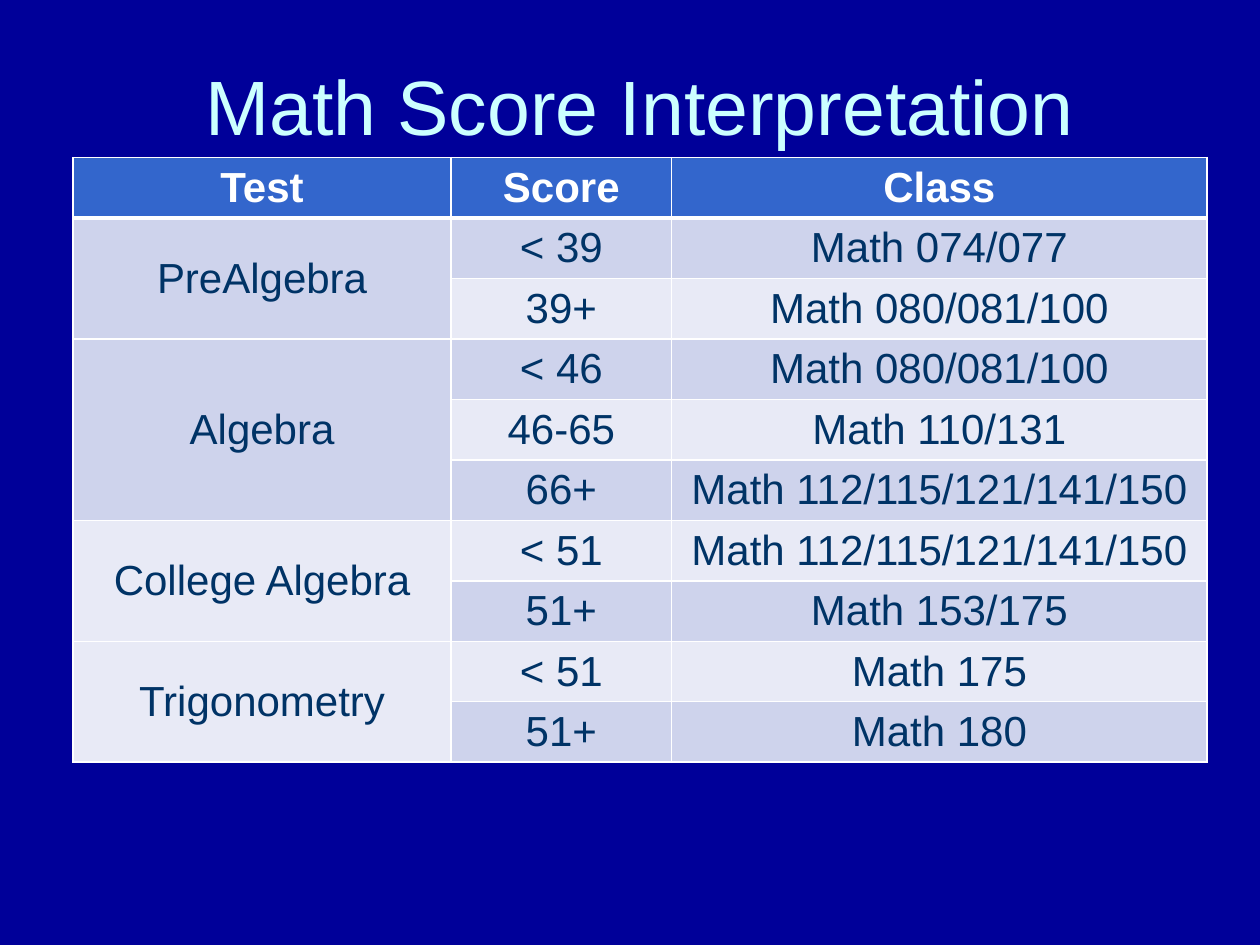
"""Build the Math Score Interpretation slide."""
from lxml import etree
from pptx import Presentation
from pptx.dml.color import RGBColor
from pptx.enum.text import MSO_ANCHOR, PP_ALIGN
from pptx.oxml.ns import qn
from pptx.util import Inches, Pt

CENTER = PP_ALIGN.CENTER
MIDDLE = MSO_ANCHOR.MIDDLE
NAVY = RGBColor(0x00, 0x00, 0x99)
PALE_CYAN = RGBColor(0xCC, 0xFF, 0xFF)
WHITE = RGBColor(0xFF, 0xFF, 0xFF)
BLUE = RGBColor(0x33, 0x66, 0xCC)
DARK_BLUE = RGBColor(0x00, 0x33, 0x66)
BANDS = (RGBColor(0xCE, 0xD3, 0xEC), RGBColor(0xE8, 0xEA, 0xF6))
FONT = "Arial"

TITLE = "Math Score Interpretation"
HEADERS = ("Test", "Score", "Class")
TESTS = [
    ("PreAlgebra", [("< 39", "Math 074/077"), ("39+", "Math 080/081/100")]),
    ("Algebra", [
        ("< 46", "Math 080/081/100"),
        ("46-65", "Math 110/131"),
        ("66+", "Math 112/115/121/141/150"),
    ]),
    ("College Algebra", [("< 51", "Math 112/115/121/141/150"), ("51+", "Math 153/175")]),
    ("Trigonometry", [("< 51", "Math 175"), ("51+", "Math 180")]),
]
COL_WIDTHS = (3, 1.75, 4.25)
ROW_HEIGHT = 0.47
CELL_MARGIN = 0.04


def add_text(tf, text, size, color, bold=False):
    tf.word_wrap = True
    p = tf.paragraphs[0]
    p.alignment = CENTER
    r = p.add_run()
    r.text = text
    r.font.name = FONT
    r.font.size = Pt(size)
    r.font.bold = bold
    r.font.color.rgb = color


def set_borders(cell, widths):
    tc_pr = cell._tc.get_or_add_tcPr()
    for side, width in zip(("lnL", "lnR", "lnT", "lnB"), widths):
        ln = etree.SubElement(tc_pr, qn(f"a:{side}"), w=str(Pt(width)))
        fill = etree.SubElement(ln, qn("a:solidFill"))
        etree.SubElement(fill, qn("a:srgbClr"), val=str(WHITE))


def style_cell(cell, row):
    set_borders(cell, (1, 1, 3 if row == 1 else 1, 3 if row == 0 else 1))
    cell.fill.solid()
    cell.fill.fore_color.rgb = BANDS[(row - 1) % 2] if row else BLUE
    cell.vertical_anchor = MIDDLE
    cell.margin_top = cell.margin_bottom = Inches(CELL_MARGIN)


def add_title(s):
    sp = s.shapes.add_textbox(Inches(0.83), Inches(0.25), Inches(8.5), Inches(1.17))
    sp.text_frame.vertical_anchor = MIDDLE
    add_text(sp.text_frame, TITLE, 44, PALE_CYAN)


def add_score_table(s):
    n_rows = 1 + sum(len(scores) for _, scores in TESTS)
    table = s.shapes.add_table(
        n_rows, len(HEADERS), Inches(0.58), Inches(1.25),
        Inches(sum(COL_WIDTHS)), Inches(ROW_HEIGHT * n_rows),
    ).table
    for col, width in zip(table.columns, COL_WIDTHS):
        col.width = Inches(width)
    for i, row in enumerate(table.rows):
        row.height = Inches(ROW_HEIGHT)
        for cell in row.cells:
            style_cell(cell, i)
    for j, header in enumerate(HEADERS):
        add_text(table.cell(0, j).text_frame, header, 24, WHITE, True)
    top = 1
    for test, scores in TESTS:
        table.cell(top, 0).merge(table.cell(top + len(scores) - 1, 0))
        add_text(table.cell(top, 0).text_frame, test, 24, DARK_BLUE)
        for i, values in enumerate(scores, top):
            for j, value in enumerate(values, 1):
                add_text(table.cell(i, j).text_frame, value, 24, DARK_BLUE)
        top += len(scores)


def main():
    prs = Presentation()
    prs.slide_width, prs.slide_height = Inches(10), Inches(7.5)
    s = prs.slides.add_slide(prs.slide_layouts[6])
    s.background.fill.solid()
    s.background.fill.fore_color.rgb = NAVY
    add_title(s)
    add_score_table(s)
    prs.save("out.pptx")


if __name__ == "__main__":
    main()
